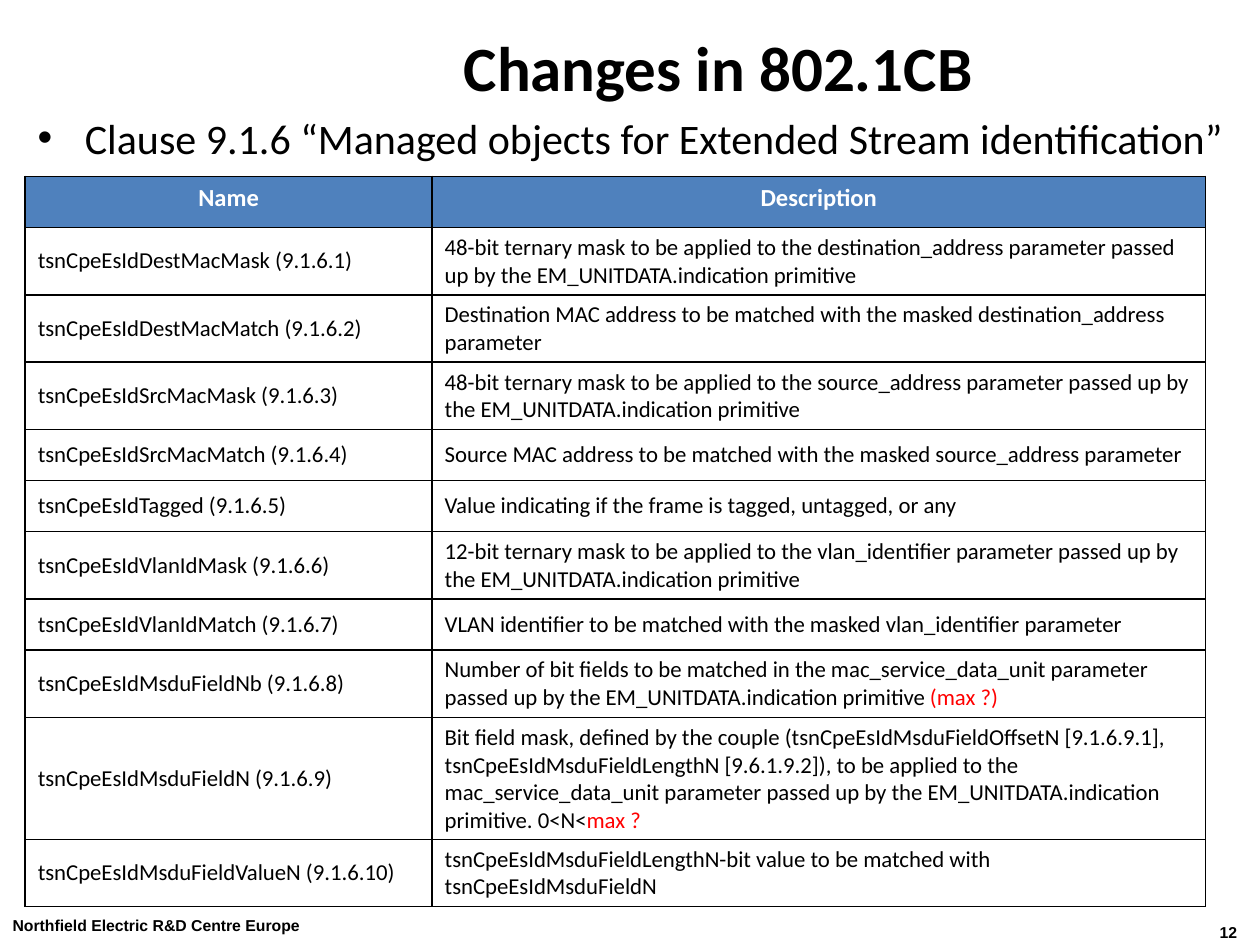
from lxml import etree
from pptx import Presentation, util as u
from pptx.dml.color import RGBColor
from pptx.enum import text
from pptx.oxml import ns

BLACK = RGBColor(0x00, 0x00, 0x00)
WHITE = RGBColor(0xFF, 0xFF, 0xFF)
RED = RGBColor(0xFF, 0x00, 0x00)
BLUE = RGBColor(0x4F, 0x81, 0xBD)

PRIMITIVE = "the EM_UNITDATA.indication primitive"
MANAGED_OBJECTS = [
    ("DestMacMask", "48-bit ternary mask to be applied to the destination_address "
     f"parameter passed up by {PRIMITIVE}"),
    ("DestMacMatch", "Destination MAC address to be matched with the masked "
     "destination_address parameter"),
    ("SrcMacMask", "48-bit ternary mask to be applied to the source_address "
     f"parameter passed up by {PRIMITIVE}"),
    ("SrcMacMatch", "Source MAC address to be matched with the masked "
     "source_address parameter"),
    ("Tagged", "Value indicating if the frame is tagged, untagged, or any"),
    ("VlanIdMask", "12-bit ternary mask to be applied to the vlan_identifier "
     f"parameter passed up by {PRIMITIVE}"),
    ("VlanIdMatch", "VLAN identifier to be matched with the masked "
     "vlan_identifier parameter"),
    ("MsduFieldNb", "Number of bit fields to be matched in the mac_service_data_unit "
     f"parameter passed up by {PRIMITIVE} ", "(max ?)"),
    ("MsduFieldN", "Bit field mask, defined by the couple (tsnCpeEsIdMsduFieldOffsetN "
     "[9.1.6.9.1], tsnCpeEsIdMsduFieldLengthN [9.6.1.9.2]), to be applied to the "
     f"mac_service_data_unit parameter passed up by {PRIMITIVE}. 0<N<", "max ?"),
    ("MsduFieldValueN", "tsnCpeEsIdMsduFieldLengthN-bit value to be matched with "
     "tsnCpeEsIdMsduFieldN"),
]


class SlideWriter:
    """Holds the text style and the current slide, and adds elements to it."""

    def __init__(self, page, face="Calibri"):
        self.page = page
        self.face = face

    def font(self, para, size, color=BLACK, bold=False, face=None):
        font = para.font
        font.name = face or self.face
        font.size = u.Pt(size)
        font.bold = bold
        font.color.rgb = color

    def title(self, words, left, top, width, height):
        box = self.page.shapes.title
        box.left, box.top, box.width, box.height = map(u.Pt, (left, top, width, height))
        frame = box.text_frame
        frame.text = words
        frame.auto_size = text.MSO_AUTO_SIZE.NONE
        frame.vertical_anchor = text.MSO_ANCHOR.MIDDLE
        para = frame.paragraphs[0]
        para.alignment = text.PP_ALIGN.CENTER
        self.font(para, 36, bold=True)

    def box(self, words, left, top, width, height):
        frame = self.page.shapes.add_textbox(
            *map(u.Pt, (left, top, width, height))).text_frame
        frame.word_wrap = True
        frame.text = words
        return frame

    def bullet(self, words, *place):
        para = self.box(words, *place).paragraphs[0]
        props = para._p.get_or_add_pPr()
        props.set("marL", str(u.Pt(27)))
        props.set("indent", str(-u.Pt(27)))
        etree.SubElement(props, ns.qn("a:buFont"), typeface="Arial")
        etree.SubElement(props, ns.qn("a:buChar"), char="•")
        self.font(para, 24)

    def footer(self, words, *place, right=False):
        frame = self.box(words, *place)
        frame.margin_left = 0
        if right:
            frame.margin_right = 0
            frame.word_wrap = False
            frame.paragraphs[0].alignment = text.PP_ALIGN.RIGHT
        self.font(frame.paragraphs[0], 9, bold=True, face="Arial")

    def border(self, cell):
        props = cell._tc.get_or_add_tcPr()
        for side in ("lnL", "lnR", "lnT", "lnB"):
            line = etree.SubElement(props, ns.qn(f"a:{side}"), w=str(u.Pt(1)))
            fill = etree.SubElement(line, ns.qn("a:solidFill"))
            etree.SubElement(fill, ns.qn("a:srgbClr"), val=str(BLACK))

    def cell(self, cell, parts, header):
        self.border(cell)
        para = cell.text_frame.paragraphs[0]
        for part in parts:
            span = para.add_run()
            span.text = part
        if header:
            cell.fill.solid()
            cell.fill.fore_color.rgb = BLUE
            para.alignment = text.PP_ALIGN.CENTER
            self.font(para, 14, WHITE, bold=True)
        else:
            cell.fill.background()
            cell.vertical_anchor = text.MSO_ANCHOR.MIDDLE
            self.font(para, 13)
        for span in para.runs[1:]:
            span.font.color.rgb = RED

    def table(self, rows, left, top, widths, row_height):
        table = self.page.shapes.add_table(
            len(rows), len(widths), u.Pt(left), u.Pt(top),
            u.Pt(sum(widths)), u.Pt(row_height * len(rows))).table
        table.horz_banding = False
        for column, width in zip(table.columns, widths):
            column.width = u.Pt(width)
        for r, row in enumerate(rows):
            table.rows[r].height = u.Pt(row_height)
            for c, parts in enumerate(row):
                self.cell(table.cell(r, c), parts, header=r == 0)


def main():
    deck = Presentation()
    deck.slide_width, deck.slide_height = u.Pt(720), u.Pt(540)
    writer = SlideWriter(deck.slides.add_slide(deck.slide_layouts[5]))
    writer.title("Changes in 802.1CB", 121.5, 15, 578, 45.5)
    writer.bullet("Clause 9.1.6 “Managed objects for Extended Stream identification”",
                  14.4, 60.5, 705.6, 453.5)
    rows = [(["Name"], ["Description"])]
    for number, (name, *parts) in enumerate(MANAGED_OBJECTS, 1):
        rows.append(([f"tsnCpeEsId{name} (9.1.6.{number})"], parts))
    writer.table(rows, 14.4, 100.8, (232.5, 442), 29.2)
    writer.footer("Northfield Electric R&D Centre Europe", 7.2, 520, 255.5, 18)
    writer.footer("12", 690.5, 523.5, 16.5, 18.5, right=True)
    deck.save("out.pptx")


if __name__ == "__main__":
    main()
